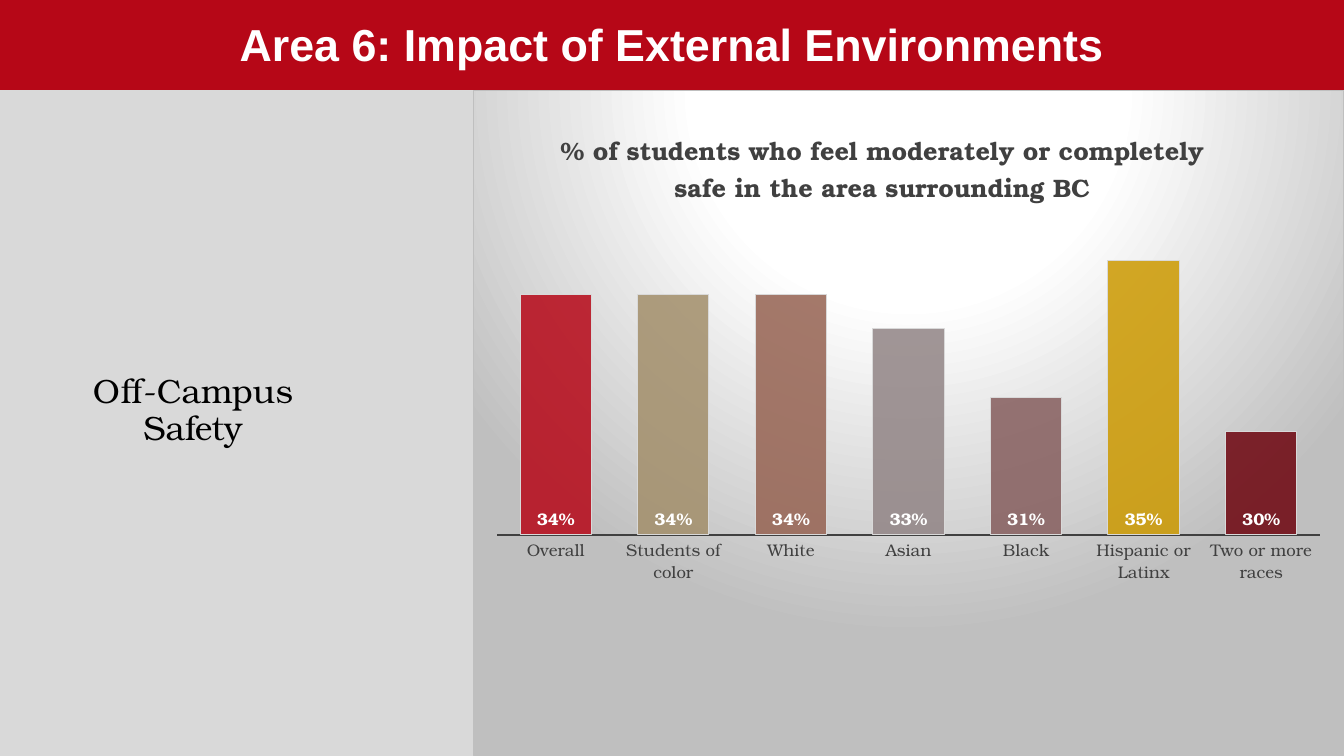
import lxml.etree
import pptx
import pptx.chart.data
import pptx.dml.color
import pptx.enum.chart
import pptx.enum.shapes
import pptx.enum.text
import pptx.oxml
import pptx.oxml.ns
import pptx.util

RGBColor = pptx.dml.color.RGBColor
Pt = pptx.util.Pt
qn = pptx.oxml.ns.qn

EMU_PER_PX = 914400 / 100.8
SLIDE_SIZE = (1344, 756)
HEADING_FONT = "Arial"
BODY_FONT = "TeX Gyre Bonum"

PALE_GREY = RGBColor(0xD9, 0xD9, 0xD9)
MID_GREY = RGBColor(0xBF, 0xBF, 0xBF)
DARK_GREY = RGBColor(0x40, 0x40, 0x40)
CRIMSON = RGBColor(0xB6, 0x07, 0x17)
WHITE = RGBColor(0xFF, 0xFF, 0xFF)
BLACK = RGBColor(0x00, 0x00, 0x00)

BAR_OPACITY = 85
SAFETY = [
    ("Overall", 0.34, CRIMSON),
    ("Students of color", 0.34, RGBColor(0xA2, 0x8E, 0x6A)),
    ("White", 0.34, RGBColor(0x95, 0x62, 0x51)),
    ("Asian", 0.33, RGBColor(0x91, 0x84, 0x85)),
    ("Black", 0.31, RGBColor(0x85, 0x5D, 0x5D)),
    ("Hispanic or Latinx", 0.35, RGBColor(0xCC, 0x99, 0x00)),
    ("Two or more races", 0.30, RGBColor(0x6D, 0x04, 0x0E)),
]

PANEL_STYLE = f"""
<c:spPr {pptx.oxml.ns.nsdecls("c", "a")}>
  <a:gradFill>
    <a:gsLst>
      <a:gs pos="0"><a:srgbClr val="{WHITE}"/></a:gs>
      <a:gs pos="39000"><a:srgbClr val="{WHITE}"/></a:gs>
      <a:gs pos="100000"><a:srgbClr val="{MID_GREY}"/></a:gs>
    </a:gsLst>
    <a:path path="circle">
      <a:fillToRect l="50000" t="-80000" r="50000" b="180000"/>
    </a:path>
  </a:gradFill>
  <a:ln w="9525"><a:solidFill><a:srgbClr val="{MID_GREY}"/></a:solidFill></a:ln>
</c:spPr>"""


def px(*lengths):
    return [pptx.util.Emu(round(n * EMU_PER_PX)) for n in lengths]


def style_font(font, size, color, name=BODY_FONT, bold=False):
    font.name, font.size, font.bold = name, Pt(size), bold
    font.color.rgb = color


def add_centred_run(paragraph, text, *style, **options):
    paragraph.alignment = pptx.enum.text.PP_ALIGN.CENTER
    run = paragraph.add_run()
    run.text = text
    style_font(run.font, *style, **options)


def set_layout(part, **values):
    """Give a chart part a manual layout; values are fractions of the chart."""
    for old in part.findall(qn("c:layout")):
        part.remove(old)
    layout = part.makeelement(qn("c:layout"))
    manual = lxml.etree.SubElement(layout, qn("c:manualLayout"))
    for tag, value in values.items():
        lxml.etree.SubElement(manual, qn("c:" + tag)).set("val", str(value))
    text = part.find(qn("c:tx"))
    part.insert(0 if text is None else part.index(text) + 1, layout)


def add_banner(slide, box):
    banner = slide.shapes.add_shape(
        pptx.enum.shapes.MSO_SHAPE.RECTANGLE, *px(*box))
    banner.shadow.inherit = False
    banner.fill.solid()
    banner.fill.fore_color.rgb = CRIMSON
    banner.line.fill.background()
    frame = banner.text_frame
    frame.word_wrap = True
    frame.vertical_anchor = pptx.enum.text.MSO_ANCHOR.MIDDLE
    frame.margin_left, frame.margin_top, frame.margin_right, frame.margin_bottom = px(3, 1, 3, 1)
    add_centred_run(frame.paragraphs[0], "Area 6: Impact of External Environments",
                    32, WHITE, name=HEADING_FONT, bold=True)


def add_topic(slide, box):
    frame = slide.shapes.add_textbox(*px(*box)).text_frame
    frame.word_wrap = True
    topic = frame.paragraphs[0]
    topic.line_spacing = 0.9
    add_centred_run(topic, "Off-Campus Safety", 24, BLACK)


def add_safety_chart(slide, box):
    data = pptx.chart.data.CategoryChartData(number_format="0%")
    data.categories = [group for group, _, _ in SAFETY]
    data.add_series("Series 1", [share for _, share, _ in SAFETY])
    chart = slide.shapes.add_chart(
        pptx.enum.chart.XL_CHART_TYPE.COLUMN_CLUSTERED, *px(*box), data).chart
    style_font(chart.font, 10, BLACK)
    chart.has_legend = False

    # Panel and plot area
    space = chart.element
    space.find(qn("c:chart")).addnext(pptx.oxml.parse_xml(PANEL_STYLE))
    set_layout(space.find(".//" + qn("c:plotArea")), layoutTarget="inner",
               xMode="edge", yMode="edge", x=0.027, y=0.204, w=0.946, h=0.464)

    # Title
    chart.has_title = True
    title = chart.chart_title
    title.include_in_layout = False
    add_centred_run(
        title.text_frame.paragraphs[0],
        "% of students who feel moderately or completely safe in the area surrounding BC",
        18, DARK_GREY, bold=True)
    set_layout(space.find(".//" + qn("c:title")),
               xMode="edge", yMode="edge", x=0.095, y=0.05)

    # Axes
    groups, shares = chart.category_axis, chart.value_axis
    no_tick = pptx.enum.chart.XL_TICK_MARK.NONE
    groups.major_tick_mark = groups.minor_tick_mark = no_tick
    groups.format.line.color.rgb = DARK_GREY
    groups.format.line.width = Pt(1.5)
    style_font(groups.tick_labels.font, 12, DARK_GREY)
    shares.minimum_scale, shares.maximum_scale = 0.27, 0.36
    shares.has_major_gridlines = False
    shares.visible = False

    # Bars and their labels
    plot = chart.plots[0]
    plot.gap_width = 65
    plot.vary_by_categories = False
    series = plot.series[0]
    for index, (_, _, color) in enumerate(SAFETY):
        bar = series.points[index].format
        bar.fill.solid()
        bar.fill.fore_color.rgb = color
        bar.line.color.rgb = PALE_GREY
        bar.line.width = Pt(0.75)
    for fill in series._element.findall(
            "/".join(map(qn, ("c:dPt", "c:spPr", "a:solidFill", "a:srgbClr")))):
        lxml.etree.SubElement(fill, qn("a:alpha")).set("val", str(BAR_OPACITY * 1000))
    labels = series.data_labels
    labels.show_value = True
    labels.number_format, labels.number_format_is_linked = "0%", False
    labels.position = pptx.enum.chart.XL_LABEL_POSITION.INSIDE_BASE
    style_font(labels.font, 12, WHITE, bold=True)


def main():
    deck = pptx.Presentation()
    deck.slide_width, deck.slide_height = px(*SLIDE_SIZE)
    slide = deck.slides.add_slide(deck.slide_layouts[6])
    slide.background.fill.solid()
    slide.background.fill.fore_color.rgb = PALE_GREY
    add_banner(slide, (0, -2, 1344, 92))
    add_topic(slide, (37, 370, 312, 90))
    add_safety_chart(slide, (473, 90, 871, 666))
    deck.save("out.pptx")


if __name__ == "__main__":
    main()
